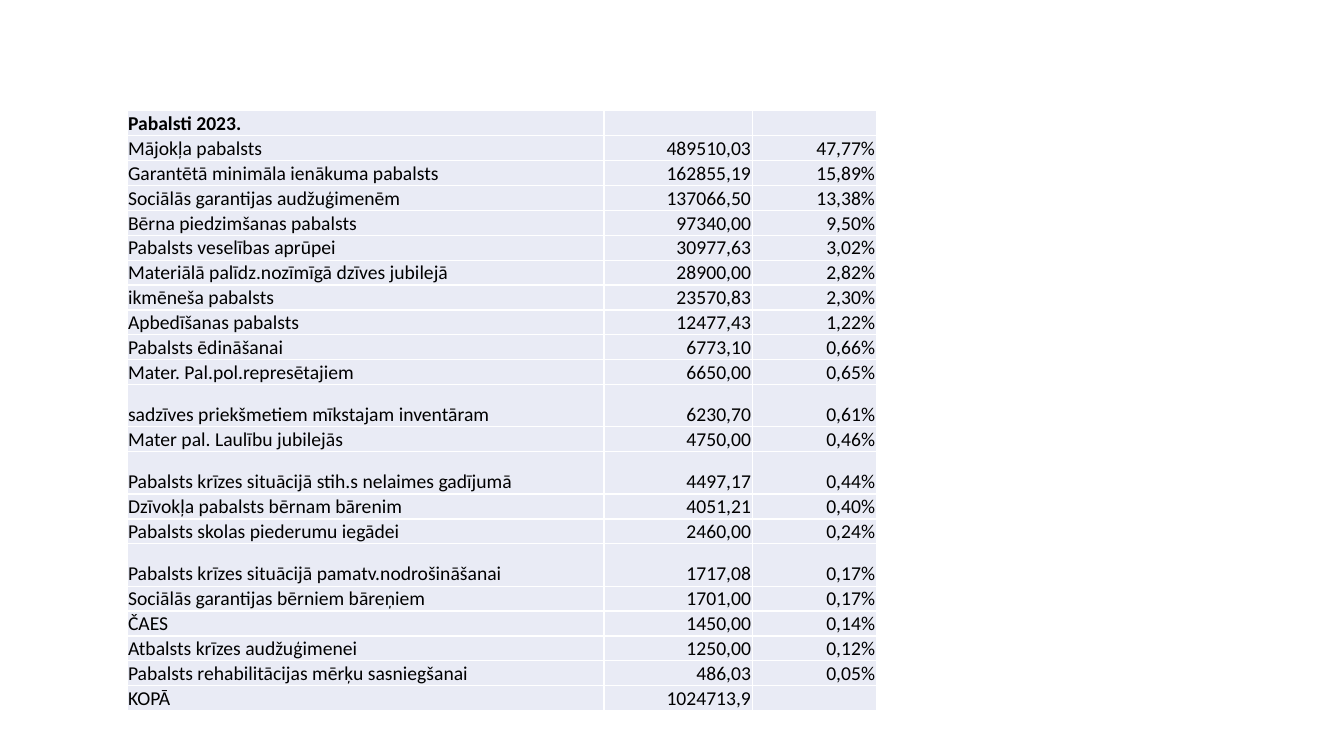
from lxml.etree import SubElement
from pptx import Presentation
from pptx.dml.color import RGBColor
from pptx.enum.text import MSO_ANCHOR, PP_ALIGN
from pptx.oxml.ns import qn
from pptx.util import Pt

PX = 9144
BLACK = RGBColor(0x00, 0x00, 0x00)
WHITE = RGBColor(0xFF, 0xFF, 0xFF)
PALE_BLUE = RGBColor(0xE9, 0xEB, 0xF5)

BENEFITS = [
    ("Pabalsti 2023.", "", ""),
    ("Mājokļa pabalsts", "489510,03", "47,77%"),
    ("Garantētā minimāla ienākuma pabalsts", "162855,19", "15,89%"),
    ("Sociālās garantijas audžuģimenēm", "137066,50", "13,38%"),
    ("Bērna piedzimšanas pabalsts", "97340,00", "9,50%"),
    ("Pabalsts veselības aprūpei", "30977,63", "3,02%"),
    ("Materiālā palīdz.nozīmīgā dzīves jubilejā", "28900,00", "2,82%"),
    ("ikmēneša pabalsts", "23570,83", "2,30%"),
    ("Apbedīšanas pabalsts", "12477,43", "1,22%"),
    ("Pabalsts ēdināšanai", "6773,10", "0,66%"),
    ("Mater. Pal.pol.represētajiem", "6650,00", "0,65%"),
    ("sadzīves priekšmetiem mīkstajam inventāram", "6230,70", "0,61%"),
    ("Mater pal. Laulību jubilejās", "4750,00", "0,46%"),
    ("Pabalsts krīzes situācijā stih.s nelaimes gadījumā", "4497,17", "0,44%"),
    ("Dzīvokļa pabalsts bērnam bārenim", "4051,21", "0,40%"),
    ("Pabalsts skolas piederumu iegādei", "2460,00", "0,24%"),
    ("Pabalsts krīzes situācijā pamatv.nodrošināšanai", "1717,08", "0,17%"),
    ("Sociālās garantijas bērniem bāreņiem", "1701,00", "0,17%"),
    ("ČAES", "1450,00", "0,14%"),
    ("Atbalsts krīzes audžuģimenei", "1250,00", "0,12%"),
    ("Pabalsts rehabilitācijas mērķu sasniegšanai", "486,03", "0,05%"),
    ("KOPĀ", "1024713,9", ""),
]
COLUMN_WIDTHS = [473, 147, 123]
TALL_ROWS = {11, 13, 16}
ROW_HEIGHTS = [42 if row in TALL_ROWS else 23 for row in range(len(BENEFITS))]


def write_text(cell, text, size=14, bold=False, align=PP_ALIGN.LEFT):
    paragraph = cell.text_frame.paragraphs[0]
    paragraph.alignment = align
    if not text:
        SubElement(paragraph._p, qn("a:endParaRPr"), sz=str(size * 100))
        return
    run = paragraph.add_run()
    run.text = text
    run.font.name = "Calibri"
    run.font.size = Pt(size)
    run.font.bold = bold
    run.font.color.rgb = BLACK


def add_borders(cell, color, width):
    properties = cell._tc.get_or_add_tcPr()
    for side in ("a:lnL", "a:lnR", "a:lnT", "a:lnB"):
        border = SubElement(properties, qn(side), w=str(Pt(width)))
        paint = SubElement(border, qn("a:solidFill"))
        SubElement(paint, qn("a:srgbClr"), val=str(color))


deck = Presentation()
deck.slide_width = 1333 * PX
deck.slide_height = 750 * PX
slide = deck.slides.add_slide(deck.slide_layouts[6])

benefit_table = slide.shapes.add_table(
    len(BENEFITS), len(COLUMN_WIDTHS), 126 * PX, 110 * PX,
    sum(COLUMN_WIDTHS) * PX, sum(ROW_HEIGHTS) * PX).table
benefit_table.first_row = False
benefit_table.horz_banding = False
for column, width in zip(benefit_table.columns, COLUMN_WIDTHS):
    column.width = width * PX

for row_index, (row, benefit) in enumerate(zip(benefit_table.rows, BENEFITS)):
    row.height = ROW_HEIGHTS[row_index] * PX
    for column_index, (cell, text) in enumerate(zip(row.cells, benefit)):
        cell.margin_left = cell.margin_right = cell.margin_top = PX
        cell.margin_bottom = 0
        cell.vertical_anchor = MSO_ANCHOR.BOTTOM
        add_borders(cell, WHITE, 1)
        cell.fill.solid()
        cell.fill.fore_color.rgb = PALE_BLUE
        write_text(cell, text, bold=row_index == 0,
                   align=PP_ALIGN.RIGHT if column_index else PP_ALIGN.LEFT)

deck.save("out.pptx")
